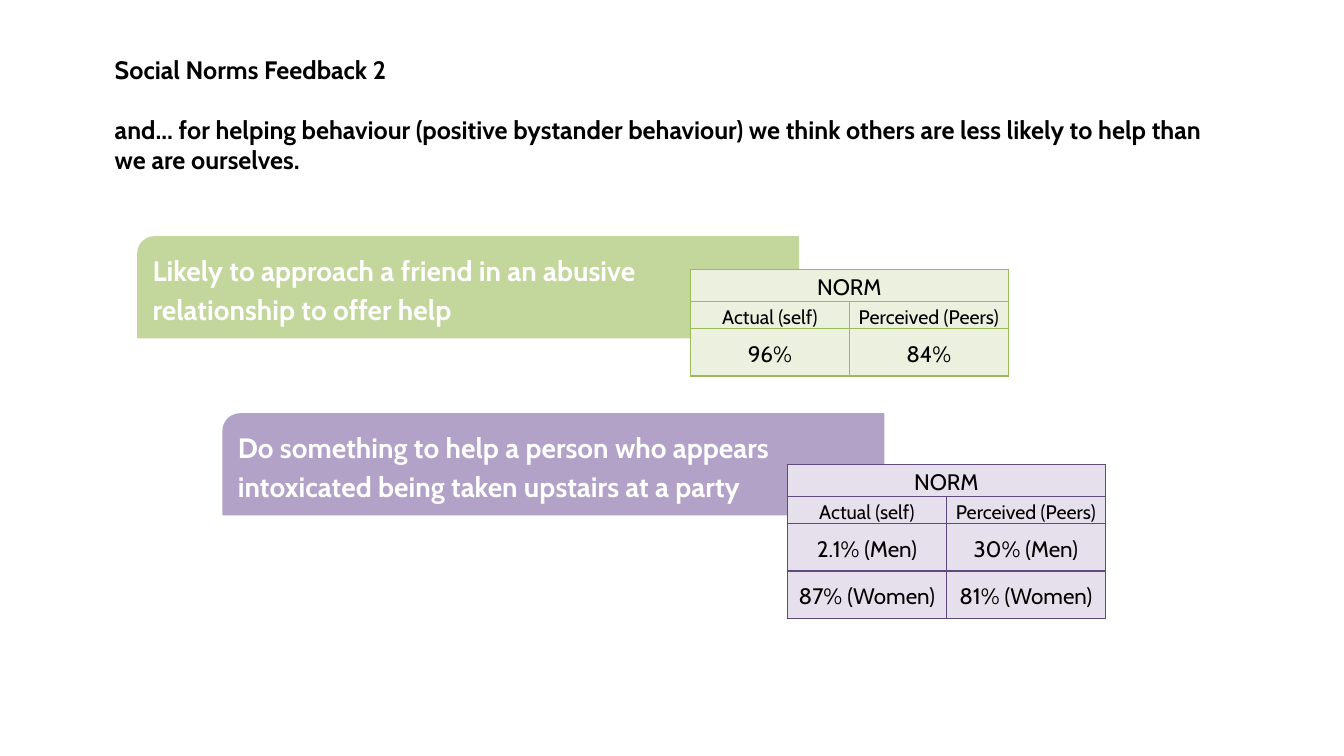
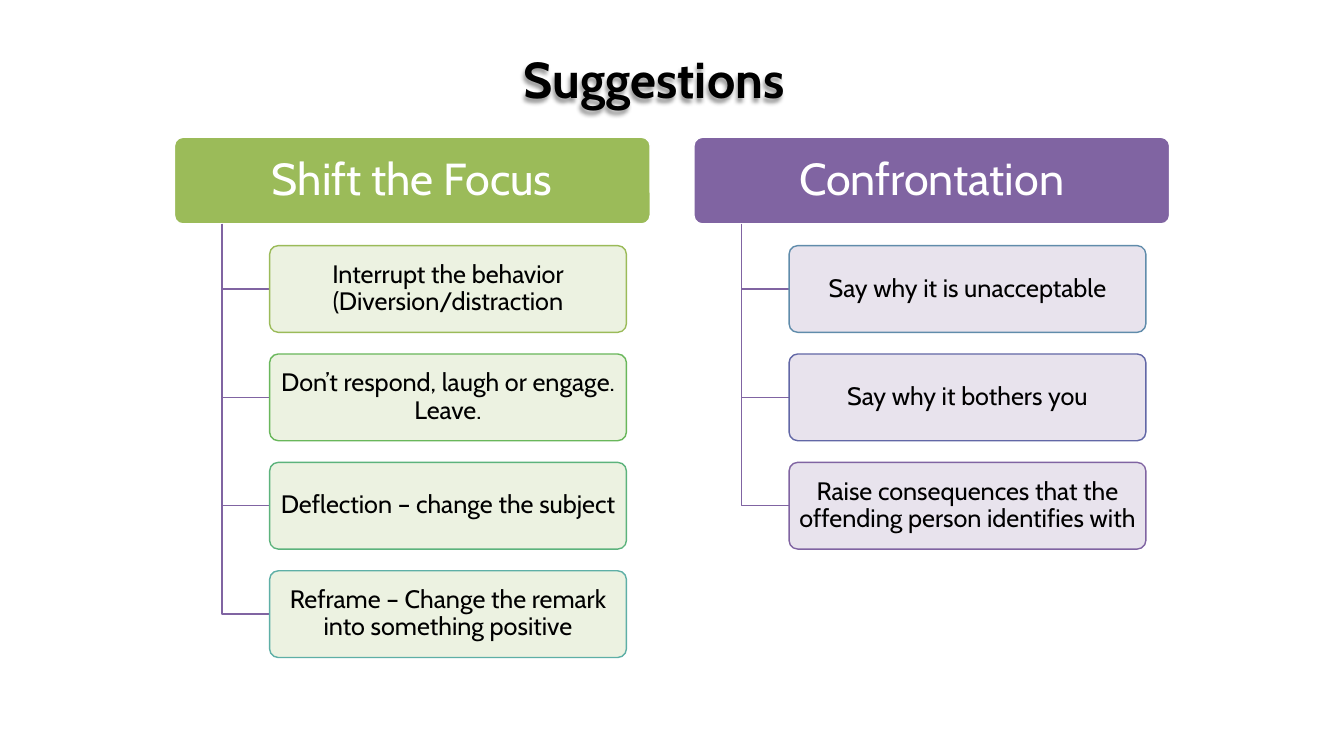
"""Build two slides on social norms feedback and bystander suggestions."""
from lxml.etree import SubElement
from pptx import Presentation
from pptx.dml.color import RGBColor
from pptx.enum.shapes import MSO_SHAPE
from pptx.enum.text import MSO_ANCHOR, PP_ALIGN
from pptx.oxml.ns import qn
from pptx.util import Inches, Pt

FONT = "Cabin"
WIDTH, HEIGHT = Inches(13.33), Inches(7.5)
BLACK = RGBColor(0x00, 0x00, 0x00)
WHITE = RGBColor(0xFF, 0xFF, 0xFF)
GREEN = RGBColor(0x9B, 0xBB, 0x59)
SOFT_GREEN = RGBColor(0xC3, 0xD6, 0x9B)
PALE_GREEN = RGBColor(0xEB, 0xF1, 0xDE)
LEAF = RGBColor(0x69, 0xB7, 0x5B)
MINT = RGBColor(0x5C, 0xB3, 0x7C)
TEAL = RGBColor(0x5E, 0xAF, 0xA6)
PURPLE = RGBColor(0x80, 0x64, 0xA2)
DARK_PURPLE = RGBColor(0x60, 0x4A, 0x7B)
SOFT_PURPLE = RGBColor(0xB3, 0xA2, 0xC7)
PALE_PURPLE = RGBColor(0xE6, 0xE0, 0xEC)
STEEL = RGBColor(0x60, 0x8C, 0xAB)
INDIGO = RGBColor(0x62, 0x67, 0xA6)

BANNER_WIDTH, BANNER_HEIGHT = 49.15, 13.33
TABLE_WIDTH = 23.65
NORM_ROW, LABEL_ROW, VALUE_ROW = 4.2, 3.33, 6.27
TREE_LEFT, TREE_TOP, TREE_GAP = 12.98, 18.15, 38.65
HEADER_WIDTH, HEADER_HEIGHT = 35.4, 11.47


def across(share):
    """Return a percentage of the slide's width as a length."""
    return round(WIDTH * share / 100)


def down(share):
    """Return a percentage of the slide's height as a length."""
    return round(HEIGHT * share / 100)


def area(left, top, width, height):
    """Turn percentages of the slide into a position and a size."""
    return across(left), down(top), across(width), down(height)


def write(para, text, size=18, color=BLACK, bold=False, align=PP_ALIGN.LEFT,
          spacing=1.0, before=0, after=0):
    """Fill one paragraph with formatted text."""
    para.text = text
    para.alignment = align
    para.line_spacing = spacing
    para.space_before, para.space_after = Pt(before), Pt(after)
    for span in para.runs:
        span.font.name = FONT
        span.font.size = Pt(size)
        span.font.bold = bold
        span.font.color.rgb = color


def add_text(page, place, wrap=True):
    """Add an empty text box."""
    box = page.shapes.add_textbox(*place)
    box.text_frame.word_wrap = wrap
    return box


def add_panel(page, kind, place, text, fill, line, inset=0.1, **style):
    """Add a filled shape with vertically centred text."""
    panel = page.shapes.add_shape(kind, *place)
    panel.shadow.inherit = False
    panel.fill.solid()
    panel.fill.fore_color.rgb = fill
    panel.line.color.rgb = line
    panel.line.width = Pt(1)
    frame = panel.text_frame
    frame.word_wrap = True
    frame.vertical_anchor = MSO_ANCHOR.MIDDLE
    frame.margin_left = frame.margin_right = Inches(inset)
    write(frame.paragraphs[0], text, **style)
    return panel


def add_banner(page, left, top, text, color):
    """Add a coloured statement with diagonal rounded corners."""
    add_panel(page, MSO_SHAPE.ROUND_2_DIAG_RECTANGLE,
              area(left, top, BANNER_WIDTH, BANNER_HEIGHT), text, color, color,
              size=20, color=WHITE, bold=True, spacing=1.15, after=10)


def set_borders(cell, color):
    """Draw a thin line on each side of a table cell."""
    properties = cell._tc.get_or_add_tcPr()
    for side in ("a:lnL", "a:lnR", "a:lnT", "a:lnB"):
        line = SubElement(properties, qn(side), w=str(Pt(1)))
        fill = SubElement(line, qn("a:solidFill"))
        SubElement(fill, qn("a:srgbClr"), val=str(color))


def add_norm_table(page, left, top, values, fill, border):
    """Add a table that sets actual norms beside perceived ones."""
    rows = [("NORM", ""), ("Actual (self)", "Perceived (Peers)"), *values]
    heights = [NORM_ROW, LABEL_ROW] + [VALUE_ROW] * len(values)
    place = area(left, top, TABLE_WIDTH, sum(heights))
    table = page.shapes.add_table(len(rows), 2, *place).table
    table.first_row = table.horz_banding = False
    for row, texts in enumerate(rows):
        table.rows[row].height = down(heights[row])
        for column, text in enumerate(texts):
            cell = table.cell(row, column)
            set_borders(cell, border)
            cell.fill.solid()
            cell.fill.fore_color.rgb = fill
            cell.margin_left = cell.margin_right = Inches(0.07)
            cell.margin_top = cell.margin_bottom = 0
            is_value = row > 1
            cell.vertical_anchor = MSO_ANCHOR.MIDDLE if is_value else MSO_ANCHOR.TOP
            write(cell.text_frame.paragraphs[0], text, size=14 if row == 1 else 16,
                  align=PP_ALIGN.CENTER, spacing=1.15, after=10 if is_value else 0)
    table.cell(0, 0).merge(table.cell(0, 1))


def add_elbow(page, left, top, right, bottom):
    """Add a purple line that runs down and then to the right."""
    builder = page.shapes.build_freeform(across(left), down(top))
    corners = [(across(left), down(bottom)), (across(right), down(bottom))]
    builder.add_line_segments(corners, close=False)
    elbow = builder.convert_to_shape()
    elbow.shadow.inherit = False
    elbow.fill.background()
    elbow.line.color.rgb = PURPLE
    elbow.line.width = Pt(1)


def add_box(page, place, text, fill, line, **style):
    """Add a slightly rounded box with centred text."""
    box = add_panel(page, MSO_SHAPE.ROUNDED_RECTANGLE, place, text, fill, line,
                    inset=0.07, align=PP_ALIGN.CENTER, spacing=0.9, **style)
    box.adjustments[0] = 0.1
    return box


def add_tree(page, left, heading, color, pale, cards):
    """Add a heading with a list of cards hanging from it."""
    trunk = left + 0.1 * HEADER_WIDTH
    card_left = left + 0.2 * HEADER_WIDTH
    add_box(page, area(left, TREE_TOP, HEADER_WIDTH, HEADER_HEIGHT),
            heading, color, WHITE, size=32, color=WHITE)
    for step, (text, outline) in enumerate(cards, start=1):
        top = TREE_TOP + 1.25 * HEADER_HEIGHT * step
        add_elbow(page, trunk, TREE_TOP + HEADER_HEIGHT,
                  card_left, top + HEADER_HEIGHT / 2)
        card = add_box(page, area(card_left, top, 0.75 * HEADER_WIDTH, HEADER_HEIGHT),
                       text, pale, outline)
        tint = card._element.spPr.find(qn("a:solidFill")).find(qn("a:srgbClr"))
        SubElement(tint, qn("a:alpha"), val="90000")


def add_text_shadow(box):
    """Give the text of an unfilled box a soft shadow."""
    effects = SubElement(box._element.spPr, qn("a:effectLst"))
    shadow = SubElement(effects, qn("a:outerShdw"), blurRad=str(Pt(3)),
                        dist=str(Pt(3)), dir="7200000", algn="tl", rotWithShape="0")
    tone = SubElement(shadow, qn("a:srgbClr"), val=str(BLACK))
    SubElement(tone, qn("a:alpha"), val="40000")


def build_norms(page):
    """Fill the slide on social norms feedback."""
    frame = add_text(page, area(7.8, 6.53, 83.65, 17.47)).text_frame
    write(frame.paragraphs[0], "Social Norms Feedback 2", bold=True)
    write(frame.add_paragraph(),
          "and... for helping behaviour (positive bystander behaviour) we think "
          "others are less likely to help than we are ourselves.",
          bold=True, before=21.2)
    add_banner(page, 10.25, 31.33,
               "Likely to approach a friend in an abusive\vrelationship to offer help",
               SOFT_GREEN)
    add_banner(page, 16.6, 54.75,
               "Do something to help a person who appears intoxicated being taken "
               "upstairs at a party", SOFT_PURPLE)
    add_norm_table(page, 58.59, 61.47,
                   [("2.1% (Men)", "30% (Men)"), ("87% (Women)", "81% (Women)")],
                   PALE_PURPLE, DARK_PURPLE)
    add_norm_table(page, 51.37, 35.7, [("96%", "84%")], PALE_GREEN, GREEN)


def build_suggestions(page):
    """Fill the slide with two trees of suggestions."""
    title = add_text(page, area(38.2, 5.73, 21.38, 9.47), wrap=False)
    write(title.text_frame.paragraphs[0], "Suggestions", size=36, bold=True)
    add_text_shadow(title)
    add_tree(page, TREE_LEFT, "Shift the Focus", GREEN, PALE_GREEN, [
        ("Interrupt the behavior (Diversion/distraction", GREEN),
        ("Don’t respond, laugh or engage. Leave.", LEAF),
        ("Deflection – change the subject", MINT),
        ("Reframe – Change the remark into something positive", TEAL),
    ])
    add_tree(page, TREE_LEFT + TREE_GAP, "Confrontation", PURPLE, PALE_PURPLE, [
        ("Say why it is unacceptable", STEEL),
        ("Say why it bothers you", INDIGO),
        ("Raise consequences that the offending person identifies with", PURPLE),
    ])


def main():
    """Build the deck and save it."""
    deck = Presentation()
    deck.slide_width, deck.slide_height = WIDTH, HEIGHT
    for build in (build_norms, build_suggestions):
        build(deck.slides.add_slide(deck.slide_layouts[6]))
    deck.save("out.pptx")


if __name__ == "__main__":
    main()
